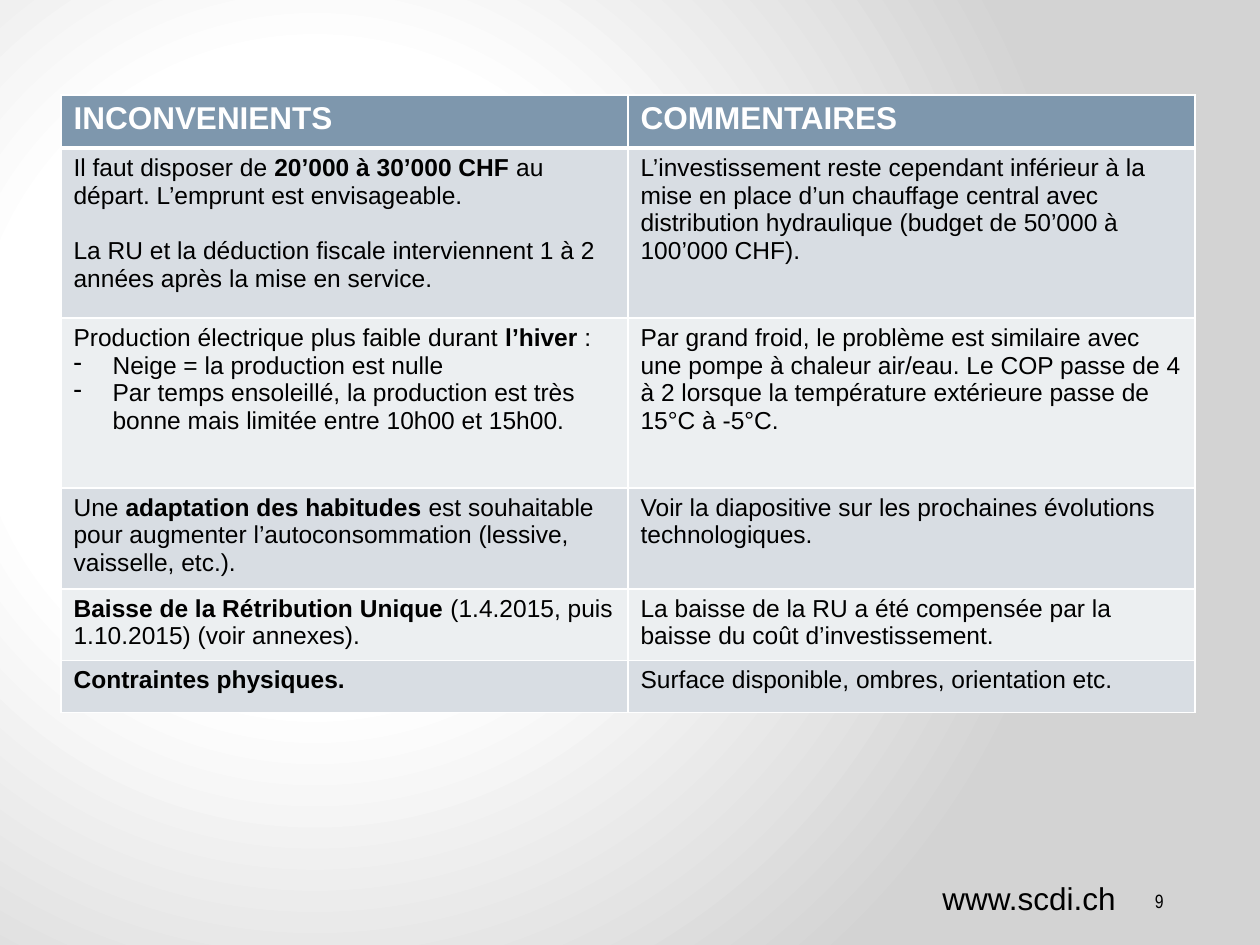
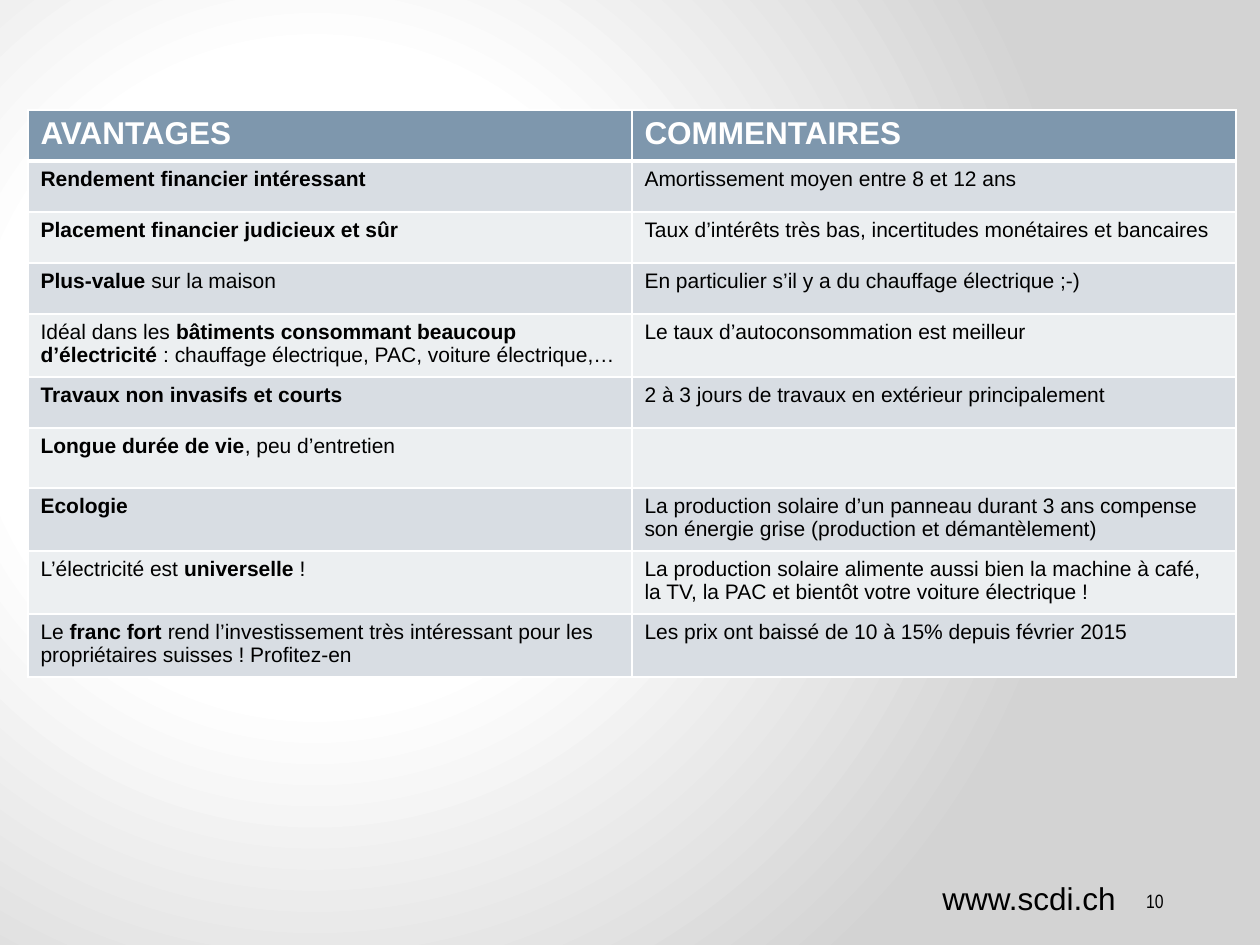
from lxml import etree
from pptx import Presentation
from pptx.dml.color import RGBColor
from pptx.enum import text
from pptx.oxml import parse_xml
from pptx.oxml.ns import nsdecls, qn
from pptx.util import Emu, Pt

WHITE = RGBColor(0xFF, 0xFF, 0xFF)
BLACK = RGBColor(0x00, 0x00, 0x00)
GREY = RGBColor(0xD3, 0xD3, 0xD3)
HEADER = RGBColor(0x7E, 0x97, 0xAD)
BANDS = (RGBColor(0xD8, 0xDD, 0xE3), RGBColor(0xEC, 0xEF, 0xF1))
PX = 914400 / 126
BULLET_INDENT = 39


def px(length):
    return Emu(round(length * PX))


def write(para, content, size, color=BLACK, font="Arial"):
    """Add runs; the parts between asterisks are bold."""
    for index, part in enumerate(content.split("*")):
        if part:
            span = para.add_run()
            span.text = part
            span.font.name = font
            span.font.size = Pt(size)
            span.font.bold = index % 2 == 1
            span.font.color.rgb = color


# Each cell is a list of paragraphs; a leading "- " makes a bullet
drawbacks = [
    (["*INCONVENIENTS*"], ["*COMMENTAIRES*"]),
    (["Il faut disposer de *20’000 à 30’000 CHF *au départ. L’emprunt est envisageable.",
      "La RU et la déduction fiscale interviennent 1 à 2 années après la mise en service."],
     ["L’investissement reste cependant inférieur à la mise en place d’un chauffage central "
      "avec distribution hydraulique (budget de 50’000 à 100’000 CHF)."]),
    (["Production électrique plus faible durant *l’hiver* :",
      "- Neige = la production est nulle",
      "- Par temps ensoleillé, la production est très bonne mais limitée entre 10h00 et 15h00."],
     ["Par grand froid, le problème est similaire avec une pompe à chaleur air/eau. Le COP "
      "passe de 4 à 2 lorsque la température extérieure passe de 15°C à -5°C."]),
    (["Une *adaptation des habitudes *est souhaitable pour augmenter l’autoconsommation "
      "(lessive, vaisselle, etc.)."],
     ["Voir la diapositive sur les prochaines évolutions technologiques."]),
    (["*Baisse de la Rétribution Unique *(1.4.2015, puis 1.10.2015) (voir annexes)."],
     ["La baisse de la RU a été compensée par la baisse du coût d’investissement."]),
    (["*Contraintes physiques.*"], ["Surface disponible, ombres, orientation etc."]),
]
benefits = [
    (["*AVANTAGES*"], ["*COMMENTAIRES*"]),
    (["*Rendement financier intéressant*"], ["Amortissement moyen entre 8 et 12 ans"]),
    (["*Placement financier judicieux et sûr*"],
     ["Taux d’intérêts très bas, incertitudes monétaires et bancaires"]),
    (["*Plus-value *sur la maison"], ["En particulier s’il y a du chauffage électrique ;-)"]),
    (["Idéal dans les *bâtiments consommant beaucoup d’électricité *: chauffage électrique, "
      "PAC, voiture électrique,…"], ["Le taux d’autoconsommation est meilleur"]),
    (["*Travaux non invasifs et courts*"],
     ["2 à 3 jours de travaux en extérieur principalement"]),
    (["*Longue durée de vie*, peu d’entretien"], []),
    (["*Ecologie*"],
     ["La production solaire d’un panneau durant 3 ans compense son énergie grise "
      "(production et démantèlement)"]),
    (["L’électricité est *universelle* !"],
     ["La production solaire alimente aussi bien la machine à café, la TV, la PAC et bientôt "
      "votre voiture électrique !"]),
    (["Le *franc fort *rend l’investissement très intéressant pour les propriétaires "
      "suisses ! Profitez-en"], ["Les prix ont baissé de 10 à 15% depuis février 2015"]),
]

# Page number, left, top, column width, row heights, text size, rows
pages = [
    (9, 61, 95, 567, [53, 170, 170, 96, 67, 52], 14, drawbacks),
    (10, 28, 110, 604, [51, 51, 51, 51, 60, 51, 60, 60, 60, 60], 12, benefits),
]

deck = Presentation()
deck.slide_width, deck.slide_height = px(1260), px(945)

# Shared background: white glow fading to grey
background = deck.slide_master.background.fill
background.gradient()
old_gradient = next(deck.slide_master.element.iter(qn("a:gradFill")))
stops = "".join(f'<a:gs pos="{pos}"><a:srgbClr val="{color}"/></a:gs>'
                for pos, color in ((0, WHITE), (41000, WHITE), (100000, GREY)))
old_gradient.getparent().replace(old_gradient, parse_xml(
    f'<a:gradFill {nsdecls("a")} rotWithShape="1"><a:gsLst>{stops}</a:gsLst>'
    '<a:path path="circle"><a:fillToRect l="50000" t="80000" r="100000" b="100000"/>'
    '</a:path></a:gradFill>'))

for number, left, top, column_width, heights, size, rows in pages:
    page = deck.slides.add_slide(deck.slide_layouts[6])

    # Page number
    box = page.shapes.add_textbox(px(1040), px(876), px(136), px(50))
    box.text_frame.word_wrap = True
    box.text_frame.vertical_anchor = text.MSO_ANCHOR.MIDDLE
    para = box.text_frame.paragraphs[0]
    para.alignment = text.PP_ALIGN.RIGHT
    write(para, str(number), 11, font="Arial Narrow")

    # Comparison table
    table = page.shapes.add_table(len(rows), 2, px(left), px(top),
                                  px(2 * column_width), px(sum(heights))).table
    for column in table.columns:
        column.width = px(column_width)
    for row_index, (height, row) in enumerate(zip(heights, rows)):
        table.rows[row_index].height = px(height)
        is_header = row_index == 0
        for column_index, paragraphs in enumerate(row):
            cell = table.cell(row_index, column_index)

            # White borders, thicker under the header
            properties = cell._tc.get_or_add_tcPr()
            for side in "LRTB":
                thick = (row_index, side) in ((0, "B"), (1, "T"))
                properties.append(parse_xml(
                    f'<a:ln{side} {nsdecls("a")} w="{Pt(3 if thick else 1)}"><a:solidFill>'
                    f'<a:srgbClr val="{WHITE}"/></a:solidFill></a:ln{side}>'))
            cell.fill.solid()
            cell.fill.fore_color.rgb = HEADER if is_header else BANDS[(row_index - 1) % 2]

            for index, content in enumerate(paragraphs):
                frame = cell.text_frame
                para = frame.paragraphs[0] if index == 0 else frame.add_paragraph()
                if content.startswith("- "):
                    content = content[2:]
                    layout = para._p.get_or_add_pPr()
                    layout.set("marL", str(px(BULLET_INDENT)))
                    layout.set("indent", str(-px(BULLET_INDENT)))
                    etree.SubElement(layout, qn("a:buChar")).set("char", "-")
                elif index:
                    para.space_before = Pt(16)
                write(para, content, 18 if is_header else size,
                      WHITE if is_header else BLACK)

    # Web address
    box = page.shapes.add_textbox(px(930), px(869), px(202), px(54))
    box.text_frame.word_wrap = False
    box.text_frame.auto_size = text.MSO_AUTO_SIZE.SHAPE_TO_FIT_TEXT
    para = box.text_frame.paragraphs[0]
    para.line_spacing = 1.1
    write(para, "www.scdi.ch", 18)

deck.save("out.pptx")
